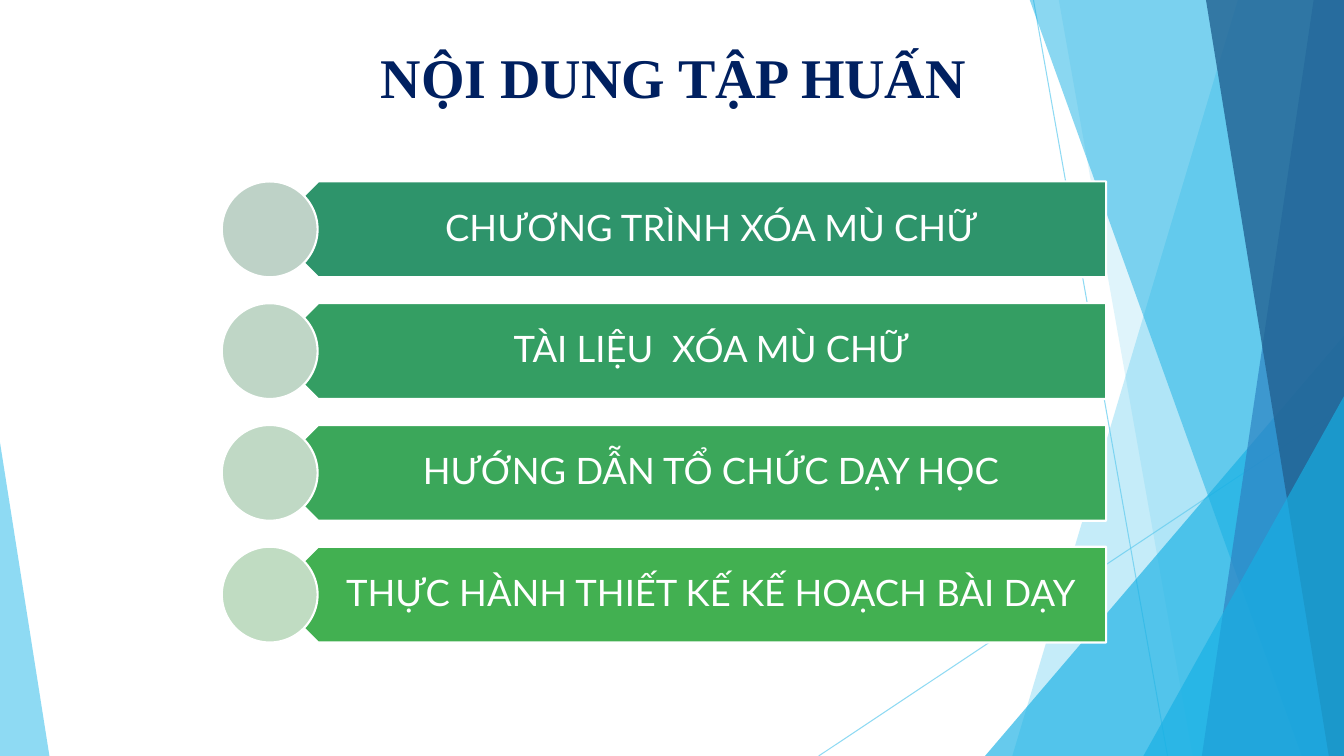
"""Build the training agenda slide: faceted backdrop, title and four agenda bars."""
from lxml.etree import SubElement
from pptx import Presentation
from pptx.dml.color import RGBColor
from pptx.enum.shapes import MSO_CONNECTOR, MSO_SHAPE
from pptx.enum.text import MSO_ANCHOR, PP_ALIGN
from pptx.oxml.ns import qn
from pptx.util import Inches, Pt

COLORS = {
    "sky": "5FCBEF", "cyan": "17B0E4", "blue": "2E83C3", "deep": "226292",
    "navy": "002060", "white": "FFFFFF",
}

prs = Presentation()
prs.slide_width, prs.slide_height = Inches(13.33), Inches(7.5)
slide = prs.slides.add_slide(prs.slide_layouts[6])
shapes = slide.shapes


def set_opacity(shape, percent):
    for color in shape._element.spPr.iter(qn("a:srgbClr")):
        SubElement(color, qn("a:alpha")).set("val", str(percent * 1000))


def write_text(text, box, font, size, color, bold=False, anchor=MSO_ANCHOR.TOP,
               margins=(0.1, 0.05, 0.1, 0.05), spacing=1.0):
    frame = shapes.add_textbox(*map(Inches, box)).text_frame
    frame.word_wrap = True
    frame.vertical_anchor = anchor
    (frame.margin_left, frame.margin_top,
     frame.margin_right, frame.margin_bottom) = map(Inches, margins)
    paragraph = frame.paragraphs[0]
    paragraph.alignment = PP_ALIGN.CENTER
    paragraph.line_spacing = spacing
    run = paragraph.add_run()
    run.text = text
    run.font.name, run.font.size, run.font.bold = font, Pt(size), bold
    run.font.color.rgb = RGBColor.from_string(color)


for ray_ends in [(10.25, 0, 11.58, 7.5), (13.33, 4.03, 8.12, 7.5)]:
    ray = shapes.add_connector(MSO_CONNECTOR.STRAIGHT, *map(Inches, ray_ends))
    ray.line.color.rgb = RGBColor.from_string(COLORS["sky"])
    ray.line.width = Pt(0.75)
    set_opacity(ray, 70)
    SubElement(ray._element.spPr, qn("a:effectLst"))

# Each band runs from its top-left and bottom-left corners to the right edge;
# each triangle has a box and an apex position.
facets = [
    ("band", (12.28, 10.04), "sky", 36),
    ("band", (10.5, 11.83), "sky", 20),
    ("triangle", (9.77, 3.33, 3.56, 4.17, 1), "cyan", 66),
    ("band", (10.21, 12.91), "cyan", 50),
    ("band", (13.03, 11.92), "blue", 70),
    ("band", (11.96, 13.18), "deep", 80),
    ("triangle", (11.34, 3.93, 1.99, 3.57, 1), "cyan", 66),
    ("triangle", (0, 4.39, 0.49, 3.11, 0), "sky", 70),
]
for kind, geometry, color, opacity in facets:
    if kind == "band":
        top_left, bottom_left = geometry
        corners = [(13.33, -0.01), (13.33, 7.5), (bottom_left, 7.5)]
        outline = shapes.build_freeform(Inches(top_left), Inches(-0.01))
        outline.add_line_segments([(Inches(x), Inches(y)) for x, y in corners])
        facet = outline.convert_to_shape()
    else:
        *box, apex = geometry
        facet = shapes.add_shape(MSO_SHAPE.ISOSCELES_TRIANGLE, *map(Inches, box))
        facet.adjustments[0] = apex
    facet.shadow.inherit = False
    facet.fill.solid()
    facet.fill.fore_color.rgb = RGBColor.from_string(COLORS[color])
    facet.line.fill.background()
    set_opacity(facet, opacity)

write_text("NỘI DUNG TẬP HUẤN", (0.35, 0.37, 12.66, 0.79), "Times New Roman", 40,
           COLORS["navy"], bold=True)

agenda = [
    ("CHƯƠNG TRÌNH XÓA MÙ CHỮ", "2E946B", "BED2C7"),
    ("TÀI LIỆU  XÓA MÙ CHỮ", "349E63", "BFD6C6"),
    ("HƯỚNG DẪN TỔ CHỨC DẠY HỌC", "3BA75A", "C0D9C5"),
    ("THỰC HÀNH THIẾT KẾ KẾ HOẠCH BÀI DẠY", "42B051", "C0DCC2"),
]
BAR_HEIGHT = 0.95
for index, (topic, bar_color, disc_color) in enumerate(agenda):
    top = 1.8 + index * 1.208
    for preset, left, width, rotation, color in [
        (MSO_SHAPE.PENTAGON, 2.68, 8.29, 180, bar_color),
        (MSO_SHAPE.OVAL, 2.2, BAR_HEIGHT, 0, disc_color),
    ]:
        part = shapes.add_shape(preset, Inches(left), Inches(top), Inches(width),
                                Inches(BAR_HEIGHT))
        part.rotation = rotation
        part.shadow.inherit = False
        part.fill.solid()
        part.fill.fore_color.rgb = RGBColor.from_string(color)
        part.line.color.rgb = RGBColor.from_string(COLORS["white"])
        part.line.width = Pt(1.5)
    write_text(topic, (2.92, top, 8.05, BAR_HEIGHT), "Lato", 26, COLORS["white"],
               anchor=MSO_ANCHOR.MIDDLE, margins=(0.42, 0.11, 0.2, 0.11), spacing=0.9)

prs.save("out.pptx")
